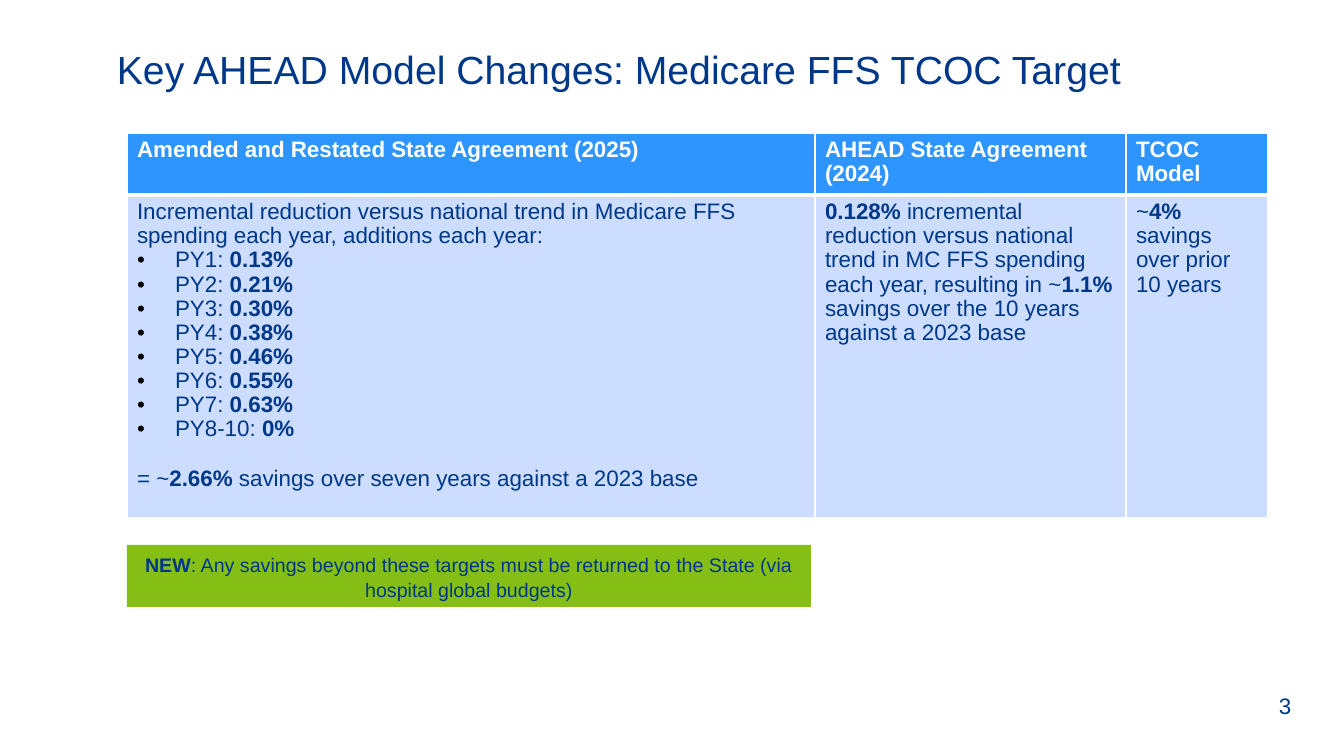
import pptx
import pptx.util
import pptx.dml.color
import pptx.enum.shapes
import pptx.enum.text
import pptx.oxml.ns
import lxml.etree

PX_PER_INCH = 100.8
FONT = "Arial"
COLOURS = {
    "navy": "003889",
    "white": "FFFFFF",
    "header": "2E95FF",
    "body": "CDDDFF",
    "callout": "85BF16",
    "bullet": "000000",
}
REDUCTIONS = [
    ("PY1", "0.13%"),
    ("PY2", "0.21%"),
    ("PY3", "0.30%"),
    ("PY4", "0.38%"),
    ("PY5", "0.46%"),
    ("PY6", "0.55%"),
    ("PY7", "0.63%"),
    ("PY8-10", "0%"),
]
HEADINGS = [
    "Amended and Restated State Agreement (2025)",
    "AHEAD State Agreement (2024)",
    "TCOC Model",
]
COLUMN_WIDTHS = [688, 311, 142]
ROW_HEIGHTS = [60, 309]
BULLET_INDENT = 38
TABLE_SIZE = 16
TABLE_SPACING = 0.97


def px(length):
    return pptx.util.Emu(round(length * 914400 / PX_PER_INCH))


def rgb(colour):
    return pptx.dml.color.RGBColor.from_string(COLOURS[colour])


def add_element(parent, tag, **attributes):
    return lxml.etree.SubElement(parent, pptx.oxml.ns.qn(tag), **attributes)


def add_runs(paragraph, runs, size, colour="navy", spacing=1.0):
    paragraph.line_spacing = spacing
    for text, bold in runs:
        run = paragraph.add_run()
        run.text = text
        run.font.name = FONT
        run.font.size = pptx.util.Pt(size)
        run.font.bold = bold
        run.font.color.rgb = rgb(colour)


def add_bullet(paragraph):
    properties = paragraph._p.get_or_add_pPr()
    properties.set("marL", str(px(BULLET_INDENT)))
    properties.set("indent", str(-px(BULLET_INDENT)))
    bullet_colour = add_element(properties, "a:buClr")
    add_element(bullet_colour, "a:srgbClr", val=COLOURS["bullet"])
    add_element(properties, "a:buFont", typeface=FONT)
    add_element(properties, "a:buChar", char="•")


def add_label(slide, box, text, size, spacing=1.0):
    label = slide.shapes.add_textbox(*map(px, box))
    frame = label.text_frame
    frame.word_wrap = True
    frame.vertical_anchor = pptx.enum.text.MSO_ANCHOR.MIDDLE
    add_runs(frame.paragraphs[0], [(text, False)], size, spacing=spacing)


def add_callout(slide, box, runs):
    callout = slide.shapes.add_shape(
        pptx.enum.shapes.MSO_SHAPE.RECTANGLE, *map(px, box))
    callout.shadow.inherit = False
    callout.fill.solid()
    callout.fill.fore_color.rgb = rgb("callout")
    callout.line.fill.background()
    frame = callout.text_frame
    frame.word_wrap = True
    frame.vertical_anchor = pptx.enum.text.MSO_ANCHOR.MIDDLE
    statement = frame.paragraphs[0]
    statement.alignment = pptx.enum.text.PP_ALIGN.CENTER
    add_runs(statement, runs, 14, spacing=1.07)


def style_cell(cell, fill, bottom_width=1):
    properties = cell._tc.get_or_add_tcPr()
    for side, width in (("L", 1), ("R", 1), ("T", 1), ("B", bottom_width)):
        border = add_element(properties, f"a:ln{side}",
                             w=str(pptx.util.Pt(width)))
        border_fill = add_element(border, "a:solidFill")
        add_element(border_fill, "a:srgbClr", val=COLOURS["white"])
    cell.fill.solid()
    cell.fill.fore_color.rgb = rgb(fill)


def add_cell_text(cell, runs, colour="navy"):
    add_runs(cell.text_frame.paragraphs[0], runs, TABLE_SIZE, colour,
             TABLE_SPACING)


def fill_amended_terms(cell):
    add_cell_text(cell, [(
        "Incremental reduction versus national trend in Medicare FFS "
        "spending each year, additions each year:", False)])
    for year, reduction in REDUCTIONS:
        item = cell.text_frame.add_paragraph()
        item.line_spacing = TABLE_SPACING
        add_bullet(item)
        add_runs(item, [(f"{year}: ", False), (reduction, True)],
                 TABLE_SIZE, spacing=TABLE_SPACING)
    total = cell.text_frame.add_paragraph()
    total.space_before = pptx.util.Pt(18)
    add_runs(total, [
        ("= ~", False),
        ("2.66% ", True),
        ("savings over seven years against a 2023 base", False),
    ], TABLE_SIZE, spacing=TABLE_SPACING)


def add_comparison(slide, left, top):
    frame = slide.shapes.add_table(
        len(ROW_HEIGHTS), len(COLUMN_WIDTHS), px(left), px(top),
        px(sum(COLUMN_WIDTHS)), px(sum(ROW_HEIGHTS)))
    comparison = frame.table
    for column, width in zip(comparison.columns, COLUMN_WIDTHS):
        column.width = px(width)
    for row, height in zip(comparison.rows, ROW_HEIGHTS):
        row.height = px(height)
    for index, heading in enumerate(HEADINGS):
        header_cell = comparison.cell(0, index)
        style_cell(header_cell, "header", bottom_width=3)
        add_cell_text(header_cell, [(heading, True)], "white")
        style_cell(comparison.cell(1, index), "body")
    fill_amended_terms(comparison.cell(1, 0))
    add_cell_text(comparison.cell(1, 1), [
        ("0.128% ", True),
        ("incremental reduction versus national trend in MC FFS spending "
         "each year, resulting in ~", False),
        ("1.1% ", True),
        ("savings over the 10 years against a 2023 base", False),
    ])
    add_cell_text(comparison.cell(1, 2), [
        ("~", False),
        ("4%", True),
        (" savings over prior 10 years", False),
    ])


def main():
    presentation = pptx.Presentation()
    presentation.slide_width = px(1344)
    presentation.slide_height = px(756)
    slide = presentation.slides.add_slide(presentation.slide_layouts[6])
    add_label(slide, (1269, 686, 64, 40), "3", 16)
    add_label(slide, (107, 38, 1159, 67),
              "Key AHEAD Model Changes: Medicare FFS TCOC Target", 28, 0.9)
    add_comparison(slide, 127, 133)
    add_callout(slide, (127, 545, 684, 62), [
        ("NEW", True),
        (": Any savings beyond these targets must be returned to the State "
         "(via hospital global budgets)", False),
    ])
    presentation.save("out.pptx")


if __name__ == "__main__":
    main()
